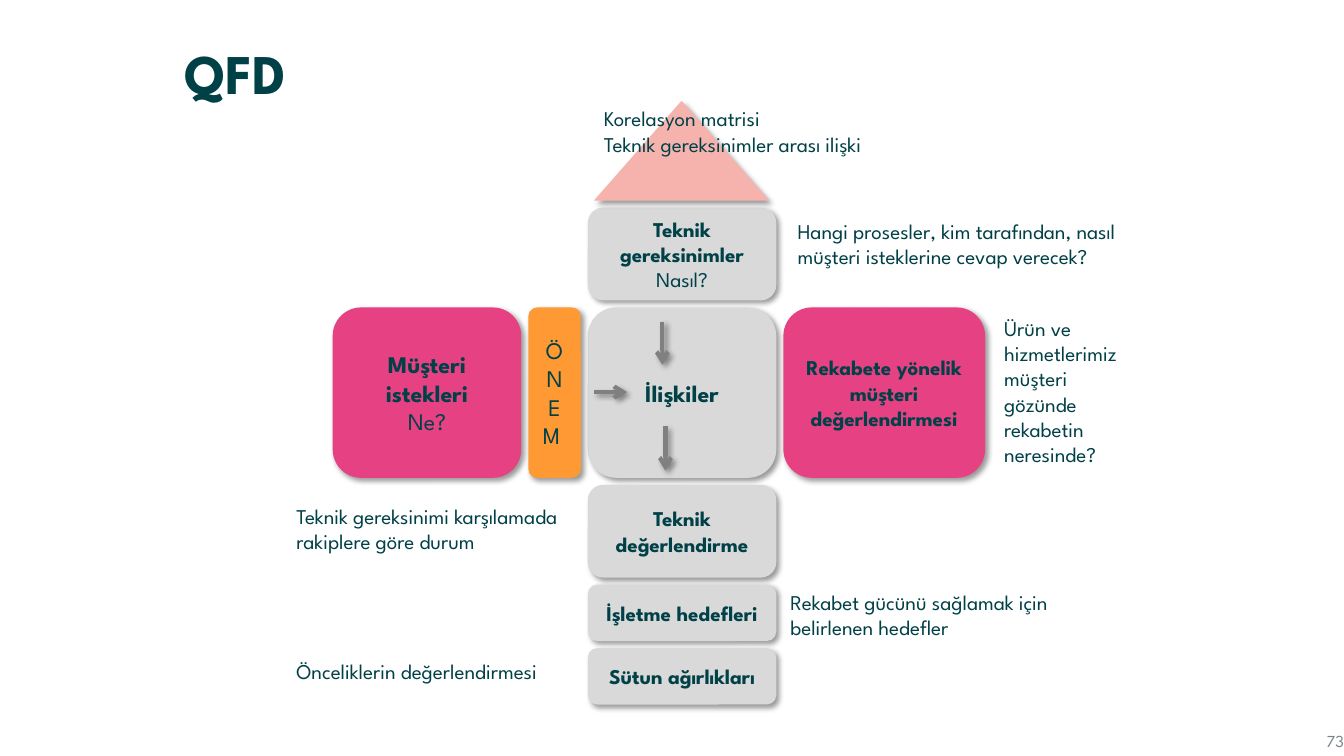
import pptx
import pptx.util
import pptx.dml.color
import pptx.enum.shapes
import pptx.enum.text
import pptx.oxml
import pptx.oxml.ns

Inches, Pt = pptx.util.Inches, pptx.util.Pt
SHAPE = pptx.enum.shapes.MSO_SHAPE
ALIGN = pptx.enum.text.PP_ALIGN
ANCHOR = pptx.enum.text.MSO_ANCHOR
FONT = "League Spartan"
COLORS = {"ink": "004047", "grey": "D9D9D9", "pink": "E54183", "orange": "FF9933",
          "roof": "F6B3AE", "arrow": "808080", "page": "798285"}
GAP = 0.07


def rgb(name):
    return pptx.dml.color.RGBColor.from_string(COLORS[name])


def shade(shape):
    """Soft shadow falling to the lower right."""
    shape._element.spPr.append(pptx.oxml.parse_xml(
        f'<a:effectLst {pptx.oxml.ns.nsdecls("a")}>'
        '<a:outerShdw blurRad="50800" dist="38100" dir="2700000" algn="tl" rotWithShape="0">'
        '<a:srgbClr val="000000"><a:alpha val="40000"/></a:srgbClr>'
        '</a:outerShdw></a:effectLst>'))


def write(frame, lines, size, align=ALIGN.LEFT, anchor=ANCHOR.TOP, color="ink"):
    """Each line is a (text, bold) pair and becomes one paragraph."""
    frame.word_wrap = True
    frame.vertical_anchor = anchor
    frame.margin_left = frame.margin_right = Inches(0.08)
    frame.margin_top = frame.margin_bottom = Inches(0.04)
    for i, (text, bold) in enumerate(lines):
        para = frame.add_paragraph() if i else frame.paragraphs[0]
        para.alignment = align
        run = para.add_run()
        run.text = text
        run.font.name, run.font.size, run.font.bold = FONT, Pt(size), bold
        run.font.color.rgb = rgb(color)


def block(slide, box, fill, lines=(), size=15, kind=SHAPE.ROUNDED_RECTANGLE):
    shape = slide.shapes.add_shape(kind, *map(Inches, box))
    shape.fill.solid()
    shape.fill.fore_color.rgb = rgb(fill)
    shape.line.fill.background()
    shade(shape)
    write(shape.text_frame, lines, size, ALIGN.CENTER, ANCHOR.MIDDLE)


def note(slide, box, *texts):
    frame = slide.shapes.add_textbox(*map(Inches, box)).text_frame
    write(frame, [(text, False) for text in texts], 15)


def arrow(slide, x, y, dx, dy):
    link = slide.shapes.add_connector(pptx.enum.shapes.MSO_CONNECTOR.STRAIGHT,
                                      *map(Inches, (x, y, x + dx, y + dy)))
    link.line.color.rgb = rgb("arrow")
    link.line.width = Pt(3)
    link.line._get_or_add_ln().append(pptx.oxml.parse_xml(
        f'<a:tailEnd {pptx.oxml.ns.nsdecls("a")} type="arrow"/>'))
    shade(link)


def heading(slide, box):
    title = slide.shapes.title
    title.left, title.top, title.width, title.height = map(Inches, box)
    write(title.text_frame, [("QFD", True)], 40, anchor=ANCHOR.MIDDLE)
    title.text_frame.margin_left = Inches(0.1)


def column(slide, x, y, width):
    """Grey cells stacked below the roof; the centre has its own arrows."""
    cells = [
        (0.92, 15, [("Teknik gereksinimler", True), ("Nasıl?", False)]),
        (1.69, 17, [("İlişkiler", True)]),
        (0.92, 15, [("Teknik değerlendirme", True)]),
        (0.56, 15, [("İşletme hedefleri", True)]),
        (0.56, 15, [("Sütun ağırlıkları", True)]),
    ]
    for height, size, lines in cells:
        block(slide, (x, y, width, height), "grey", lines, size)
        y += height + GAP


def flow(slide, x, y):
    """Arrows inside the centre cell."""
    arrow(slide, x + 0.06, y + 0.84, 0.33, 0)
    arrow(slide, x + 0.74, y + 0.14, 0, 0.43)
    arrow(slide, x + 0.77, y + 1.18, 0, 0.44)


def sides(slide, x, y, height):
    """Wings of the house, leaving room for the centre cell."""
    wings = [
        (1.87, "pink", 17, [("Müşteri istekleri", True), ("Ne?", False)]),
        (0.52, "orange", 17, [("Ö N E M ", False)]),
        (1.87, None, 0, []),
        (2, "pink", 15, [("Rekabete yönelik müşteri değerlendirmesi", True)]),
    ]
    for width, fill, size, lines in wings:
        if fill:
            block(slide, (x, y, width, height), fill, lines, size)
        x += width + GAP


def roof(slide, x, y):
    block(slide, (x, y, 1.74, 0.99), "roof", kind=SHAPE.ISOSCELES_TRIANGLE)
    note(slide, (x + 0.02, y + 0.01, 3.48, 0.61),
         "Korelasyon matrisi", "Teknik gereksinimler arası ilişki")


def notes(slide):
    note(slide, (7.83, 2.13, 3.55, 0.84),
         "Hangi prosesler, kim tarafından, nasıl müşteri isteklerine cevap verecek?")
    note(slide, (9.88, 3.09, 1.43, 1.6),
         "Ürün ve hizmetlerimizmüşteri gözünde rekabetin neresinde?")
    note(slide, (7.76, 5.81, 3.48, 0.59), "Rekabet gücünü sağlamak için belirlenen hedefler")
    note(slide, (2.86, 6.49, 2.9, 0.34), "Önceliklerin değerlendirmesi")
    note(slide, (2.86, 4.95, 2.9, 0.59), "Teknik gereksinimi karşılamada rakiplere göre durum")


def footer(slide, box):
    frame = slide.shapes.add_textbox(*map(Inches, box)).text_frame
    write(frame, [("73", False)], 12, ALIGN.RIGHT, ANCHOR.MIDDLE, "page")
    frame.margin_right = 0


def main():
    deck = pptx.Presentation()
    deck.slide_width, deck.slide_height = Inches(13.33), Inches(7.5)
    slide = deck.slides.add_slide(deck.slide_layouts[5])
    heading(slide, (1.73, 0.36, 11.5, 0.72))
    column(slide, 5.83, 2.06, 1.87)
    flow(slide, 5.83, 3.05)
    sides(slide, 3.3, 3.05, 1.69)
    roof(slide, 5.89, 1)
    notes(slide)
    footer(slide, (12.41, 7.19, 0.92, 0.31))
    deck.save("out.pptx")


if __name__ == "__main__":
    main()
